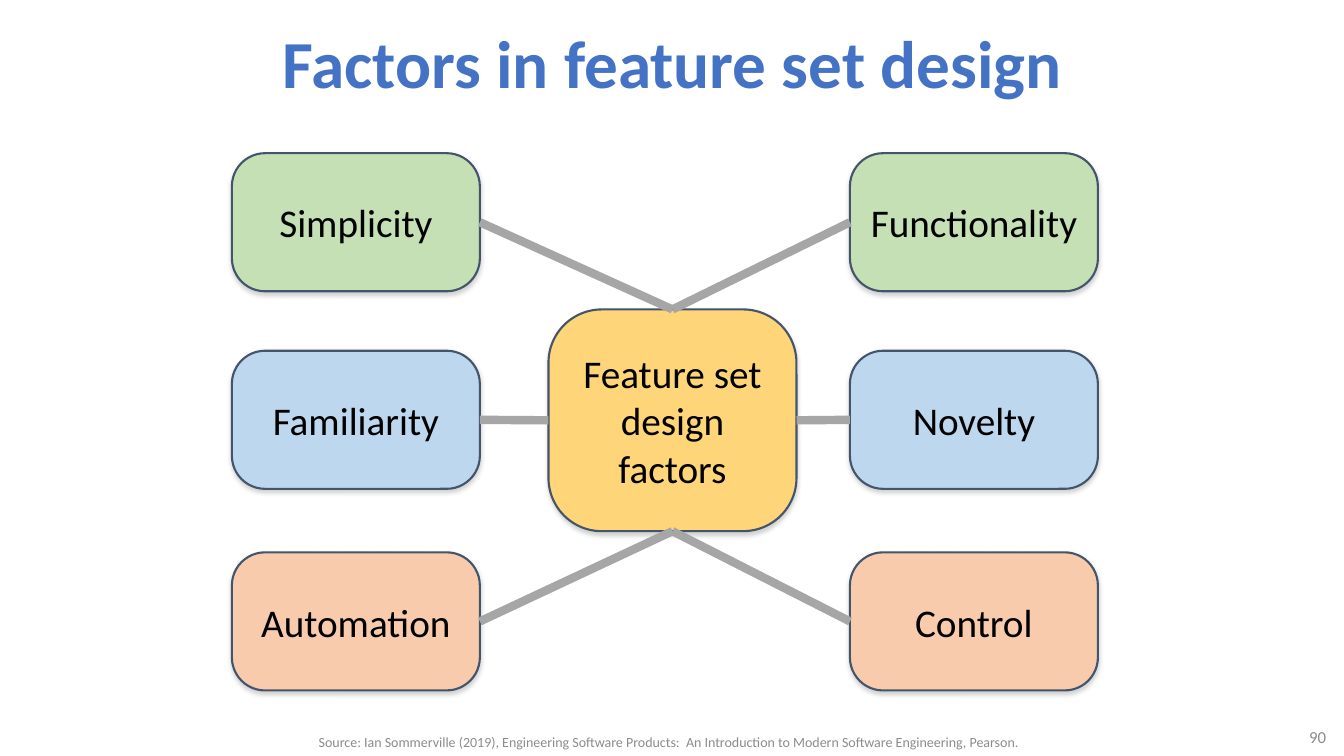
from lxml.etree import SubElement
from pptx import Presentation
from pptx.dml.color import RGBColor
from pptx.enum.shapes import MSO_CONNECTOR, MSO_SHAPE
from pptx.enum.text import MSO_ANCHOR, PP_ALIGN
from pptx.oxml.ns import qn
from pptx.util import Pt

PX = 9144  # 100 px to the inch


def color(value):
    return RGBColor.from_string(value)


def write(shape, text, size=28, ink="000000", bold=False, align=PP_ALIGN.CENTER, inset=0):
    frame = shape.text_frame
    frame.word_wrap = True
    frame.vertical_anchor = MSO_ANCHOR.MIDDLE
    frame.margin_left = frame.margin_right = inset * PX
    frame.margin_top = frame.margin_bottom = inset * PX // 2
    para = frame.paragraphs[0]
    para.alignment = align
    span = para.add_run()
    span.text = text
    span.font.name = "Calibri"
    span.font.size = Pt(size)
    span.font.bold = bold
    span.font.color.rgb = color(ink)


deck = Presentation()
deck.slide_width, deck.slide_height = 1333 * PX, 750 * PX
page = deck.slides.add_slide(deck.slide_layouts[6])

# Title, page number and source
SOURCE = ("Source: Ian Sommerville (2019), Engineering Software Products:  "
          "An Introduction to Modern Software Engineering, Pearson.")
texts = [
    ((217, 0, 900, 123), "Factors in feature set design",
     dict(size=48, ink="4472C4", bold=True)),
    ((1220, 718, 105, 26), "90", dict(size=12, ink="8C8C8C", align=PP_ALIGN.RIGHT)),
    ((234, 722, 858, 28), SOURCE, dict(size=10, ink="8C8C8C")),
]
for place, text, style in texts:
    box = page.shapes.add_textbox(*(length * PX for length in place))
    write(box, text, inset=10, **style)

# Factor boxes in three rows of two, then the centre box
LEFT, RIGHT, WIDTH, HEIGHT = 230, 843, 246, 137
rows = [
    (152, "C5E0B4", "Simplicity", "Functionality"),
    (348, "BDD7EE", "Familiarity", "Novelty"),
    (548, "F8CBAD", "Automation", "Control"),
]
cells = []
for top, fill, left_text, right_text in rows:
    cells.append((LEFT, top, HEIGHT, fill, left_text))
    cells.append((RIGHT, top, HEIGHT, fill, right_text))
cells.append((544, 307, 220, "FFD579", "Feature set design factors"))

boxes = []
for left, top, height, fill, text in cells:
    box = page.shapes.add_shape(MSO_SHAPE.ROUNDED_RECTANGLE,
                                left * PX, top * PX, WIDTH * PX, height * PX)
    box.adjustments[0] = 0.24
    box.fill.solid()
    box.fill.fore_color.rgb = color(fill)
    box.line.color.rgb = color("44546A")
    box.line.width = Pt(1.5)
    # Soft shadow straight below
    box.shadow.inherit = False
    effects = box._element.spPr.find(qn("a:effectLst"))
    shadow = SubElement(effects, qn("a:outerShdw"), blurRad=str(Pt(3.1)),
                        dist=str(Pt(1.8)), dir="5400000", rotWithShape="0")
    tint = SubElement(shadow, qn("a:srgbClr"), val="808080")
    SubElement(tint, qn("a:alpha"), val="35000")
    write(box, text)
    boxes.append(box)

# Lines from the centre box to the inner side of each factor
*factors, center = boxes
TOP_SIDE, LEFT_SIDE, BOTTOM_SIDE, RIGHT_SIDE = range(4)
center_sides = [TOP_SIDE, TOP_SIDE, LEFT_SIDE, RIGHT_SIDE, BOTTOM_SIDE, BOTTOM_SIDE]
for index, (factor, side) in enumerate(zip(factors, center_sides)):
    line = page.shapes.add_connector(MSO_CONNECTOR.STRAIGHT, 0, 0, 0, 0)
    line.begin_connect(center, side)
    line.end_connect(factor, LEFT_SIDE if index % 2 else RIGHT_SIDE)
    line.line.color.rgb = color("A6A6A6")
    line.line.width = Pt(6)
    SubElement(line._element.spPr, qn("a:effectLst"))

deck.save("out.pptx")
